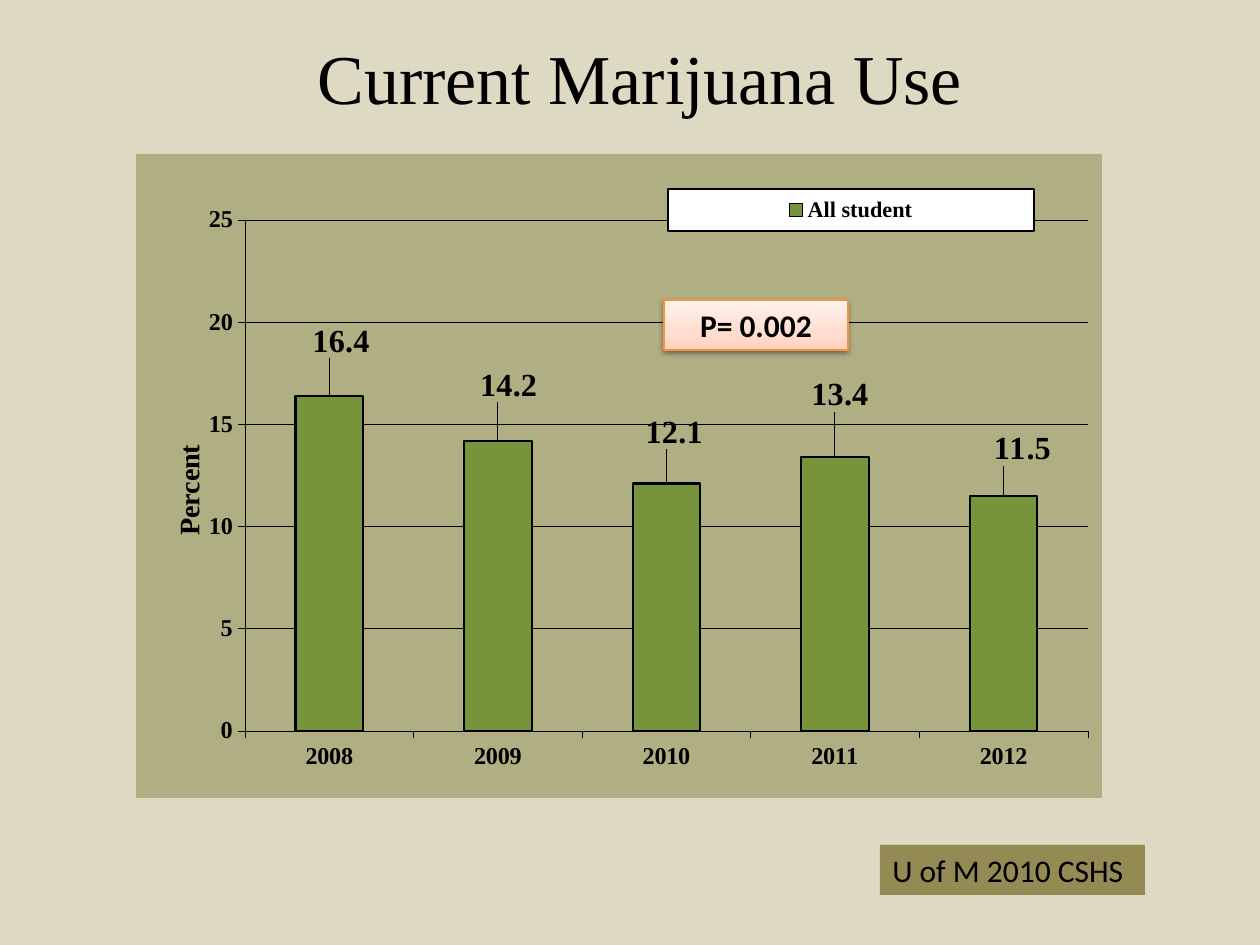
from dataclasses import dataclass

from lxml.etree import SubElement
from pptx import Presentation
from pptx.chart.data import CategoryChartData
from pptx.dml.color import RGBColor
from pptx.enum.chart import XL_CHART_TYPE as ChartType, XL_LABEL_POSITION as LabelPosition
from pptx.enum.chart import XL_LEGEND_POSITION as LegendPosition, XL_TICK_MARK as TickMark
from pptx.enum.shapes import MSO_SHAPE as Preset
from pptx.enum.text import MSO_ANCHOR as Anchor, MSO_AUTO_SIZE as AutoSize, PP_ALIGN as Align
from pptx.oxml import parse_xml
from pptx.oxml.ns import nsdecls, qn
from pptx.util import Emu, Pt

SCALE = 914400 / 126
SERIF, SANS = "Times New Roman", "Calibri"
COLORS = {
    "page": "DDD9C3", "panel": "B0AE83", "bar": "77933C", "ink": "000000",
    "source": "948A54", "accent": "F69240", "white": "FFFFFF",
}
GRADIENT = ((0, "FFD2BD"), (35, "FFDED0"), (100, "FFF2ED"))


@dataclass(frozen=True)
class Frame:
    left: int
    top: int
    width: int
    height: int

    def emu(self) -> list[Emu]:
        return [px(n) for n in (self.left, self.top, self.width, self.height)]


@dataclass(frozen=True)
class Bar:
    year: str
    percent: float
    label_dx: int
    label_dy: int


@dataclass(frozen=True)
class Caption:
    text: str
    frame: Frame
    align: Align
    bold: bool


CHART_FRAME = Frame(136, 154, 966, 644)
BARS = (
    Bar("2008", 16.4, 12, -32),
    Bar("2009", 14.2, 11, -33),
    Bar("2010", 12.1, 8, -29),
    Bar("2011", 13.4, 5, -40),
    Bar("2012", 11.5, 19, -25),
)
SOURCE = Caption("U of M 2010 CSHS", Frame(880, 845, 265, 50), Align.LEFT, False)
P_VALUE = Caption("P= 0.002", Frame(664, 300, 184, 50), Align.CENTER, True)


def px(count: int) -> Emu:
    return Emu(round(count * SCALE))


def rgb(name: str) -> RGBColor:
    return RGBColor.from_string(COLORS[name])


def style(font, size: float, face: str, bold: bool) -> None:
    font.size, font.name, font.bold = Pt(size), face, bold
    font.color.rgb = rgb("ink")


def outline(line, width: float, color: str = "ink") -> None:
    line.color.rgb = rgb(color)
    line.width = Pt(width)


def solid_properties(fill: str, line: str = ""):
    edge = (f'<a:ln w="9525"><a:solidFill><a:srgbClr val="{COLORS[line]}"/></a:solidFill></a:ln>'
            if line else "<a:ln><a:noFill/></a:ln>")
    return parse_xml(
        f'<c:spPr {nsdecls("c", "a")}><a:solidFill><a:srgbClr val="{COLORS[fill]}"/>'
        f"</a:solidFill>{edge}</c:spPr>")


def set_layout(parent, previous: str, inner: bool = False, **pixels: int) -> None:
    for old in parent.findall(qn("c:layout")):
        parent.remove(old)
    layout = parse_xml(f'<c:layout {nsdecls("c")}><c:manualLayout/></c:layout>')
    manual = layout[0]
    if inner:
        SubElement(manual, qn("c:layoutTarget")).set("val", "inner")
    if previous != "c:idx":
        for mode in ("xMode", "yMode"):
            SubElement(manual, qn(f"c:{mode}")).set("val", "edge")
    for key, value in pixels.items():
        extent = CHART_FRAME.width if key in "xw" else CHART_FRAME.height
        SubElement(manual, qn(f"c:{key}")).set("val", f"{value / extent:.4f}")
    if previous:
        parent.find(qn(previous)).addnext(layout)
    else:
        parent.insert(0, layout)


def add_title(page) -> None:
    title = page.shapes.title
    title.left, title.top, title.width, title.height = Frame(73, 21, 1134, 189).emu()
    box = title.text_frame
    box.vertical_anchor = Anchor.TOP
    box.margin_top = px(14)
    para = box.paragraphs[0]
    para.alignment = Align.CENTER
    span = para.add_run()
    span.text = "Current Marijuana Use"
    style(span.font, 40, SERIF, False)


def format_axes(chart) -> None:
    for axis in (chart.category_axis, chart.value_axis):
        style(axis.tick_labels.font, 13.8, SERIF, True)
        outline(axis.format.line, 0.29)
        axis.major_tick_mark = TickMark.OUTSIDE
        axis.minor_tick_mark = TickMark.NONE
    axis = chart.value_axis
    axis.minimum_scale, axis.maximum_scale, axis.major_unit = 0, 25, 5
    axis.has_major_gridlines = True
    outline(axis.major_gridlines.format.line, 0.29)
    span = axis.axis_title.text_frame.paragraphs[0].add_run()
    span.text = "Percent"
    style(span.font, 16.1, SERIF, True)
    set_layout(axis.axis_title.element if hasattr(axis.axis_title, "element")
               else chart.element.find(f".//{qn('c:title')}"), "c:tx", x=30, y=286)


def format_legend(chart) -> None:
    chart.has_legend = True
    chart.legend.position = LegendPosition.RIGHT
    chart.legend.include_in_layout = False
    style(chart.legend.font, 12.7, SERIF, True)
    legend = chart.element.find(f".//{qn('c:legend')}")
    set_layout(legend, "c:legendPos", x=532, y=35, w=366, h=42)
    legend.find(qn("c:overlay")).addnext(solid_properties("white", "ink"))


def format_bars(chart) -> None:
    plot = chart.plots[0]
    plot.gap_width, plot.vary_by_categories = 150, False
    series = plot.series[0]
    series.format.fill.solid()
    series.format.fill.fore_color.rgb = rgb("bar")
    outline(series.format.line, 1.15)
    series.data_labels.show_value = True
    style(series.data_labels.font, 18.4, SERIF, True)
    for index in range(len(BARS)):
        label = series.points[index].data_label
        style(label.font, 18.4, SERIF, True)
        label.position = LabelPosition.OUTSIDE_END
    for bar, label in zip(BARS, chart.element.iter(qn("c:dLbl"))):
        set_layout(label, "c:idx", x=bar.label_dx, y=bar.label_dy)


def add_usage_chart(page) -> None:
    data = CategoryChartData()
    data.categories = [bar.year for bar in BARS]
    data.add_series("All student", [bar.percent for bar in BARS])
    chart = page.shapes.add_chart(ChartType.COLUMN_CLUSTERED, *CHART_FRAME.emu(), data).chart
    chart.has_title = False
    style(chart.font, 20.7, SERIF, True)
    format_axes(chart)
    format_legend(chart)
    format_bars(chart)
    set_layout(chart.element.find(f".//{qn('c:plotArea')}"), "", inner=True,
               x=109, y=66, w=843, h=511)
    chart.element.find(qn("c:chart")).addnext(solid_properties("panel"))


def add_caption(page, caption: Caption):
    shape = page.shapes.add_shape(Preset.RECTANGLE, *caption.frame.emu())
    shape.shadow.inherit = False
    shape.line.fill.background()
    box = shape.text_frame
    box.word_wrap, box.auto_size = True, AutoSize.SHAPE_TO_FIT_TEXT
    para = box.paragraphs[0]
    para.alignment = caption.align
    span = para.add_run()
    span.text = caption.text
    style(span.font, 18, SANS, caption.bold)
    return shape


def add_source(page) -> None:
    shape = add_caption(page, SOURCE)
    shape.fill.solid()
    shape.fill.fore_color.rgb = rgb("source")


def add_p_value(page) -> None:
    shape = add_caption(page, P_VALUE)
    outline(shape.line, 0.75, "accent")
    stops = "".join(f'<a:gs pos="{at * 1000}"><a:srgbClr val="{color}"/></a:gs>'
                    for at, color in GRADIENT)
    properties = shape.element.spPr
    properties.find(qn("a:prstGeom")).addnext(parse_xml(
        f'<a:gradFill {nsdecls("a")} rotWithShape="1"><a:gsLst>{stops}</a:gsLst>'
        '<a:lin ang="16200000" scaled="0"/></a:gradFill>'))
    properties.find(qn("a:effectLst")).append(parse_xml(
        f'<a:outerShdw {nsdecls("a")} blurRad="{Pt(3.1)}" dist="{Pt(1.6)}" dir="5400000" '
        f'rotWithShape="0"><a:srgbClr val="{COLORS["ink"]}"><a:alpha val="38000"/>'
        "</a:srgbClr></a:outerShdw>"))


def main() -> None:
    deck = Presentation()
    deck.slide_width, deck.slide_height = px(1260), px(945)
    page = deck.slides.add_slide(deck.slide_layouts[5])
    page.background.fill.solid()
    page.background.fill.fore_color.rgb = rgb("page")
    add_title(page)
    add_usage_chart(page)
    add_source(page)
    add_p_value(page)
    deck.save("out.pptx")


if __name__ == "__main__":
    main()
